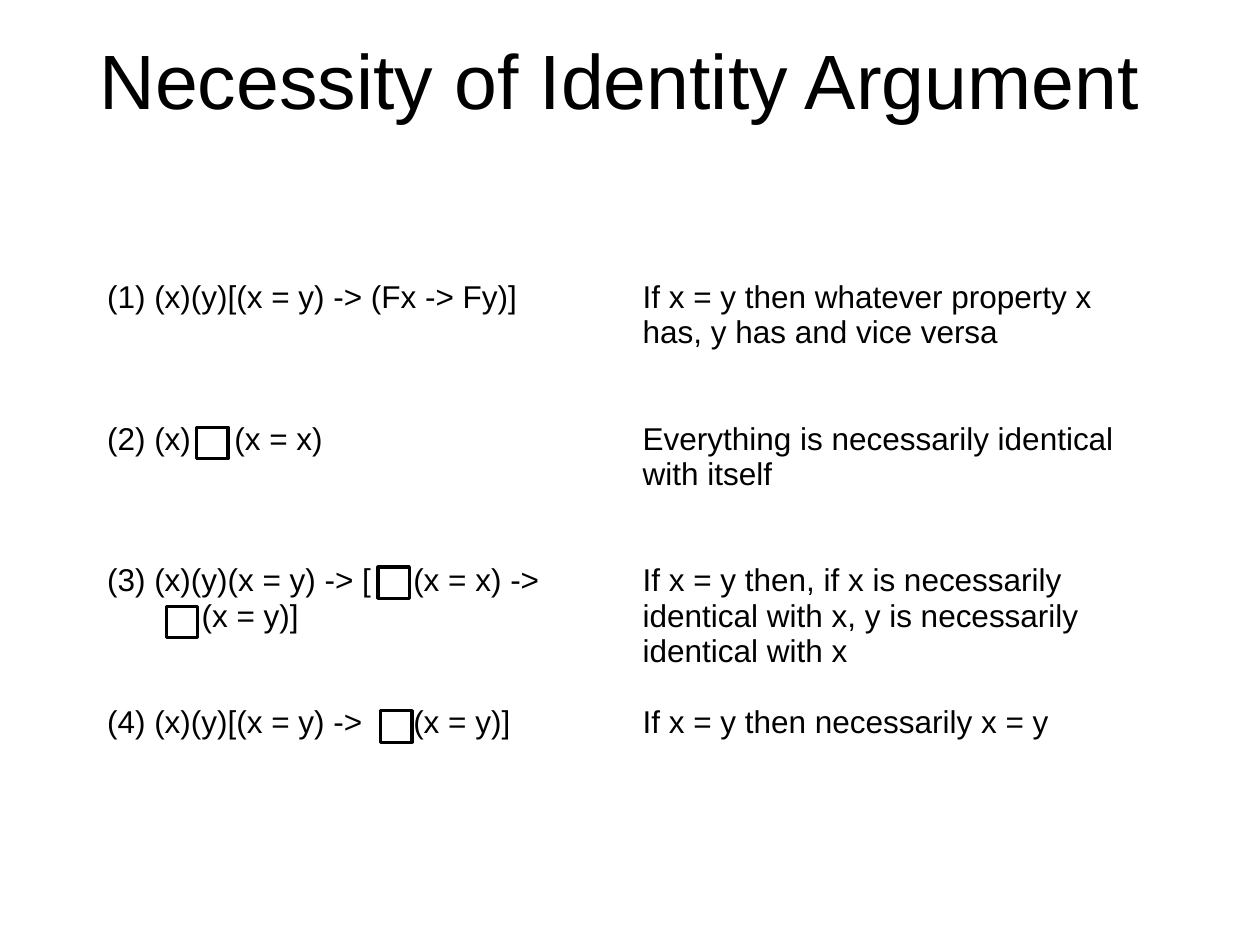
from pptx import Presentation
from pptx.dml.color import RGBColor
from pptx.enum.shapes import MSO_SHAPE
from pptx.enum.text import MSO_ANCHOR, PP_ALIGN
from pptx.oxml.xmlchemy import OxmlElement
from pptx.util import Inches, Pt

RECTANGLE = MSO_SHAPE.RECTANGLE
MIDDLE = MSO_ANCHOR.MIDDLE
CENTER = PP_ALIGN.CENTER
TITLE_ONLY = 5

COLORS = {"ink": "000000"}
TITLE_FONT = {"name": "Arial", "size": Pt(44)}
CELL_FONT = {"name": "Arial", "size": Pt(18)}
CELL_SPACING = {"space_before": Pt(3.6), "space_after": Pt(6)}
PLAIN_TABLE = {"first_row": False, "horz_banding": False}

STEPS = [
    ("(1) (x)(y)[(x = y) -> (Fx -> Fy)]", [],
     "If x = y then whatever property x has, y has and vice versa"),
    ("(2) (x)\t(x = x)", [1.01],
     "Everything is necessarily identical with itself"),
    ("(3) (x)(y)(x = y) -> [\t(x = x) ->\v\t(x = y)]", [0.75, 2.43],
     "If x = y then, if x is necessarily identical with x, y is necessarily identical with x"),
    ("(4) (x)(y)[(x = y) ->\t(x = y)]", [2.43],
     "If x = y then necessarily x = y"),
]
NECESSITY_BOXES = [(1.56, 3.39), (3, 4.5), (1.32, 4.81), (3.02, 5.64)]


def apply(target, values):
    """Set each named attribute on the target."""
    for name, value in values.items():
        setattr(target, name, value)


class SlideWriter:
    """Hold the style and the current slide, and add its elements."""

    def __init__(self, page):
        self.page = page
        self.ink = RGBColor.from_string(COLORS["ink"])

    def style_spans(self, para, font):
        """Format every span of a paragraph."""
        for span in para.runs:
            apply(span.font, font)
            span.font.color.rgb = self.ink

    def title(self, text, left, top, width, height):
        """Fill and place the title placeholder."""
        box = self.page.shapes.title
        place = {"left": left, "top": top, "width": width, "height": height}
        apply(box, {name: Inches(value) for name, value in place.items()})
        box.text_frame.text = text
        box.text_frame.vertical_anchor = MIDDLE
        para = box.text_frame.paragraphs[0]
        para.alignment = CENTER
        self.style_spans(para, TITLE_FONT)

    def tab_stops(self, para, positions):
        """Give a paragraph left tab stops, in inches."""
        stops = OxmlElement("a:tabLst")
        for position in positions:
            stop = OxmlElement("a:tab")
            stop.set("pos", str(Inches(position)))
            stop.set("algn", "l")
            stops.append(stop)
        para._p.get_or_add_pPr().append(stops)

    def cell(self, cell, text, tabs=()):
        """Write one unfilled table cell."""
        cell.fill.background()
        para = cell.text_frame.paragraphs[0]
        para.text = text
        apply(para, CELL_SPACING)
        self.style_spans(para, CELL_FONT)
        if tabs:
            self.tab_stops(para, tabs)

    def argument_table(self, steps, left, top, width, height):
        """Add the table of formulas and their readings."""
        frame = self.page.shapes.add_table(
            len(steps), 2, Inches(left), Inches(top), Inches(width), Inches(height))
        table = frame.table
        apply(table, PLAIN_TABLE)
        for row, (formula, tabs, reading) in enumerate(steps):
            self.cell(table.cell(row, 0), formula, tabs)
            self.cell(table.cell(row, 1), reading)

    def necessity_box(self, left, top, side=0.25):
        """Add one square necessity operator."""
        box = self.page.shapes.add_shape(
            RECTANGLE, Inches(left), Inches(top), Inches(side), Inches(side))
        box.shadow.inherit = False
        box.fill.background()
        box.line.color.rgb = self.ink
        box.line.width = Pt(1.75)


def main():
    """Build and save the deck."""
    deck = Presentation()
    deck.slide_width, deck.slide_height = Inches(10), Inches(7.5)
    writer = SlideWriter(deck.slides.add_slide(deck.slide_layouts[TITLE_ONLY]))
    writer.title("Necessity of Identity Argument", 0.67, 0, 8.5, 1.25)
    writer.argument_table(STEPS, 0.75, 2.17, 8.5, 4.5)
    for left, top in NECESSITY_BOXES:
        writer.necessity_box(left, top)
    deck.save("out.pptx")


if __name__ == "__main__":
    main()
